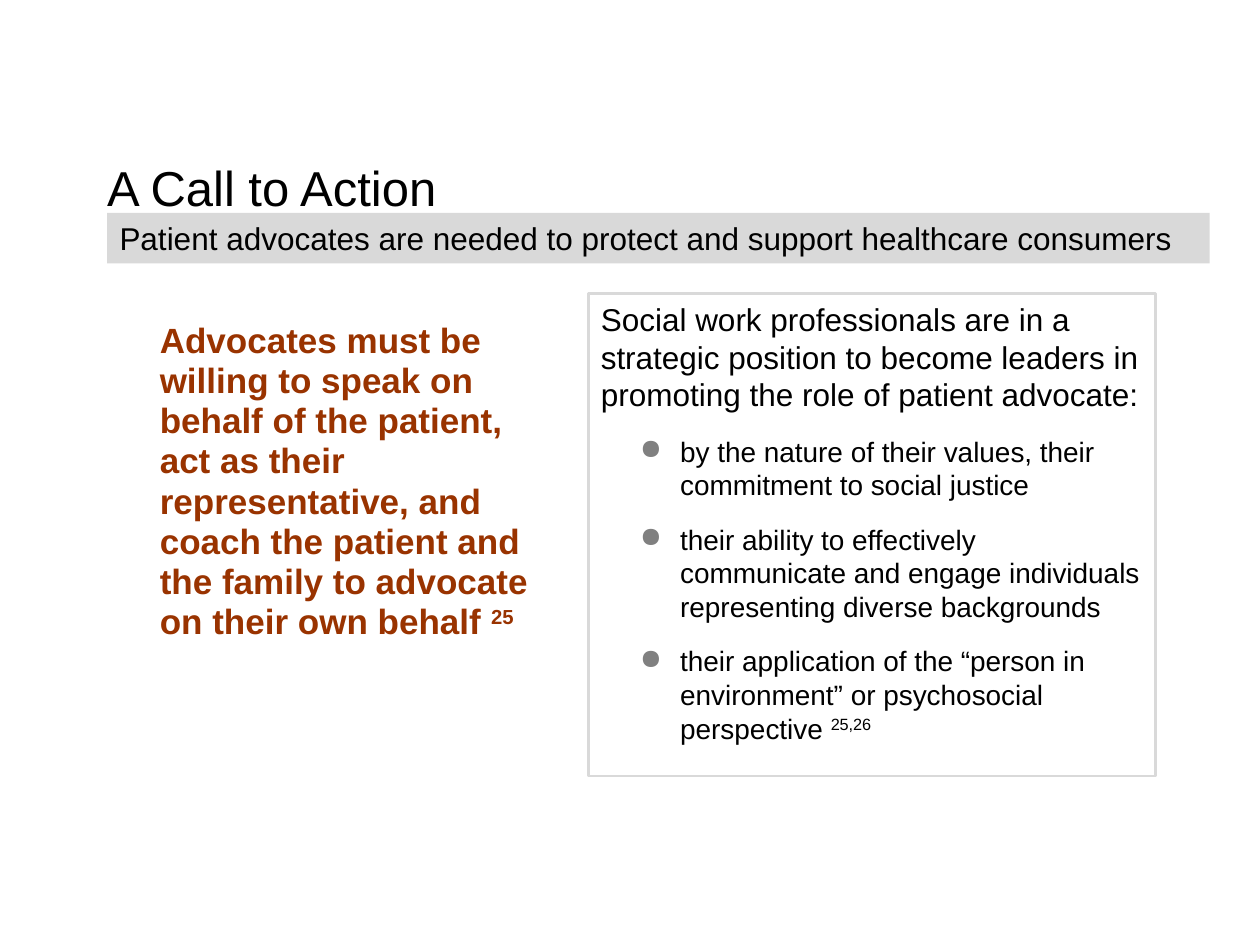
from lxml import etree
from pptx import Presentation, util as u
from pptx.dml.color import RGBColor
from pptx.enum import shapes, text
from pptx.oxml.ns import qn

COLORS = {"text": "000000", "accent": "993300", "panel": "FFFFFF",
          "grey": "D9D9D9", "bullet": "808080"}
BULLETS = [
    ("by the nature of their values, their commitment to social justice", ""),
    ("their ability to effectively communicate and engage individuals "
     "representing diverse backgrounds", ""),
    ("their application of the “person in environment” or psychosocial perspective ",
     "25,26"),
]


class SlideBuilder:
    font = "Arial"

    def __init__(self, presentation):
        self.slide = presentation.slides.add_slide(presentation.slide_layouts[5])

    def color(self, name):
        return RGBColor.from_string(COLORS[name])

    def frame(self, shape, anchor=text.MSO_ANCHOR.TOP):
        frame = shape.text_frame
        frame.word_wrap = True
        frame.auto_size = text.MSO_AUTO_SIZE.NONE
        frame.vertical_anchor = anchor
        return frame

    def set_text(self, paragraph, words, size, color="text", bold=False, note=""):
        paragraph.text = words
        paragraph.alignment = text.PP_ALIGN.LEFT
        if note:
            run = paragraph.add_run()
            run.text = note
            run.font._element.set("baseline", "30000")
        for run in paragraph.runs:
            run.font.name = self.font
            run.font.size = u.Pt(size)
            run.font.bold = bold
            run.font.color.rgb = self.color(color)

    def title(self, words, left, top, width, height):
        shape = self.slide.shapes.title
        shape.left, shape.top = u.Inches(left), u.Inches(top)
        shape.width, shape.height = u.Inches(width), u.Inches(height)
        frame = self.frame(shape)
        frame.margin_top = u.Inches(0.08)
        self.set_text(frame.paragraphs[0], words, 28)

    def text_box(self, left, top, width, height):
        return self.frame(self.slide.shapes.add_textbox(
            u.Inches(left), u.Inches(top), u.Inches(width), u.Inches(height)))

    def rectangle(self, left, top, width, height, fill, line=None,
                  anchor=text.MSO_ANCHOR.TOP):
        shape = self.slide.shapes.add_shape(
            shapes.MSO_SHAPE.RECTANGLE,
            u.Inches(left), u.Inches(top), u.Inches(width), u.Inches(height))
        shape.shadow.inherit = False
        shape.fill.solid()
        shape.fill.fore_color.rgb = self.color(fill)
        if line:
            shape.line.color.rgb = self.color(line)
            shape.line.width = u.Pt(1.5)
        else:
            shape.line.fill.background()
        return self.frame(shape, anchor)

    def bullet(self, frame, words, note):
        paragraph = frame.add_paragraph()
        paragraph.level = 1
        paragraph.space_before = u.Pt(12)
        properties = paragraph._p.get_or_add_pPr()
        properties.set("marL", str(u.Inches(0.63)))
        properties.set("indent", str(u.Inches(-0.32)))
        color = etree.SubElement(properties, qn("a:buClr"))
        etree.SubElement(color, qn("a:srgbClr"), val=COLORS["bullet"])
        etree.SubElement(properties, qn("a:buChar"), char="●")
        self.set_text(paragraph, words, 16, note=note)


def main():
    presentation = Presentation()
    presentation.slide_width = u.Inches(10)
    presentation.slide_height = u.Inches(7.5)
    builder = SlideBuilder(presentation)

    builder.title("A Call to Action", 0.75, 1.17, 8.75, 0.92)

    statement = builder.text_box(1.17, 2.49, 3.33, 2.68).paragraphs[0]
    statement.line_spacing = u.Pt(23)
    builder.set_text(statement,
                     "Advocates must be willing to speak on behalf of the patient, "
                     "act as their representative, and coach the patient and the "
                     "family to advocate on their own behalf ",
                     20, "accent", bold=True, note="25")

    panel = builder.rectangle(4.67, 2.33, 4.5, 3.83, "panel", "grey")
    builder.set_text(panel.paragraphs[0],
                     "Social work professionals are in a strategic position to become "
                     "leaders in promoting the role of patient advocate:", 18)
    for words, note in BULLETS:
        builder.bullet(panel, words, note)

    banner = builder.rectangle(0.85, 1.69, 8.75, 0.4, "grey",
                               anchor=text.MSO_ANCHOR.MIDDLE)
    builder.set_text(banner.paragraphs[0],
                     "Patient advocates are needed to protect and support "
                     "healthcare consumers", 18)

    presentation.save("out.pptx")


if __name__ == "__main__":
    main()
